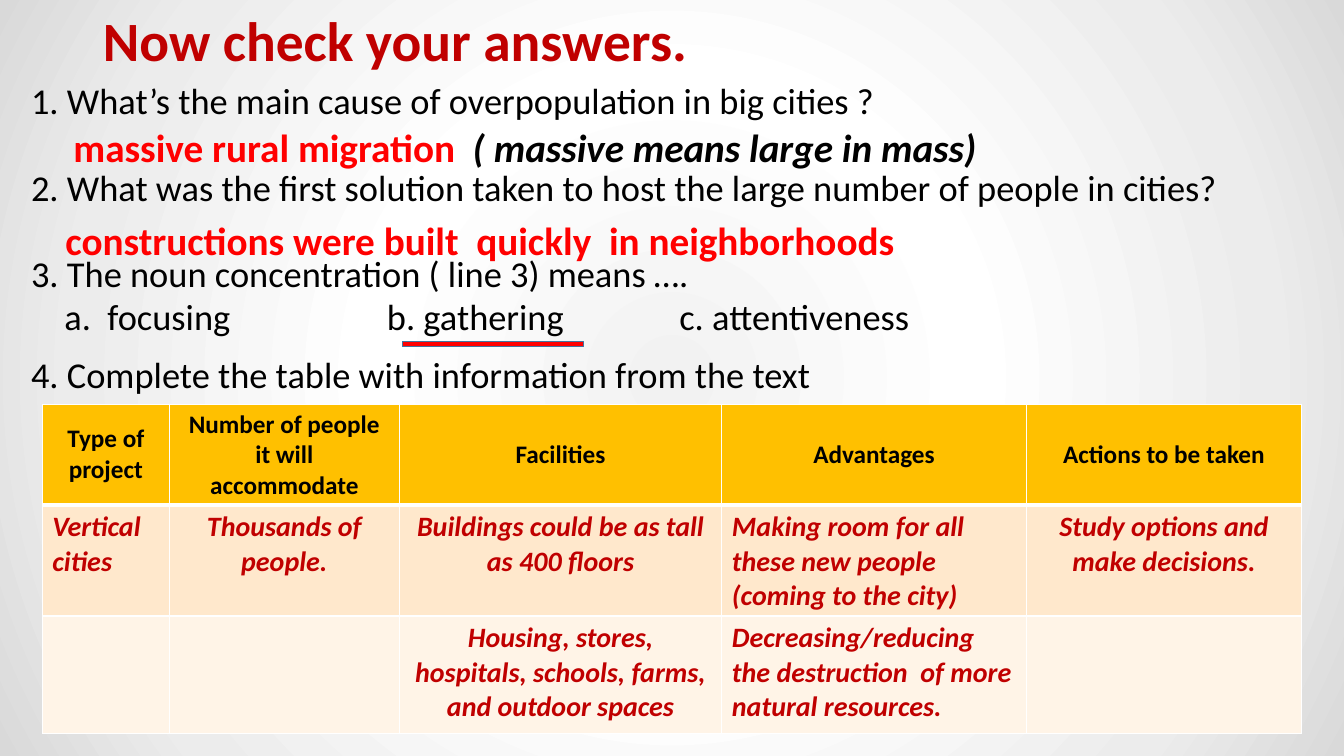
import pptx
import pptx.dml.color
import pptx.enum.shapes
import pptx.enum.text
import pptx.oxml
import pptx.oxml.ns
import pptx.util

Inches = pptx.util.Inches
Pt = pptx.util.Pt
ALIGN = pptx.enum.text.PP_ALIGN
ANCHOR = pptx.enum.text.MSO_ANCHOR

FONT = "Calibri"
COLORS = {
    "title": "C00000", "text": "000000", "answer": "FF0000", "outline": "43739E",
    "header": "FFC000", "first_row": "FFE8CC", "second_row": "FFF4E7", "border": "FFFFFF",
}
BACKGROUND_STOPS = [(0, "F2F2F2"), (39, "FFFFFF"), (78, "ECECEC"), (100, "D9D9D9")]

TITLE = "Now check your answers."
QUESTIONS = [
    "1. What’s the main cause of overpopulation in big cities ?",
    "2. What was the first solution taken to host the large number of people in cities?",
    "3. The noun concentration ( line 3) means ….",
]
CHOICES = ["a.  focusing", "b. gathering", "c. attentiveness"]
CHOICE_STOPS = [0.33, 3.53, 6.43]
MIGRATION_ANSWER = "massive rural migration  "
MIGRATION_NOTE = "( massive means large in mass)"
CONSTRUCTION_ANSWER = "constructions were built  quickly  in neighborhoods"
TABLE_QUESTION = "4. Complete the table with information from the text"
TABLE_ROWS = [
    ["Type of project", "Number of people it will accommodate", "Facilities",
     "Advantages", "Actions to be taken"],
    ["Vertical cities", "Thousands of people.", "Buildings could be as tall as 400 floors",
     "Making room for all these new people (coming to the city)",
     "Study options and make decisions."],
    ["", "", "Housing, stores, hospitals, schools, farms, and outdoor spaces",
     "Decreasing/reducing the destruction  of more natural resources.", ""],
]
ROW_FILLS = ["header", "first_row", "second_row"]
COLUMN_WIDTHS = [1.26, 2.28, 3.2, 3.02, 2.73]
ROW_HEIGHTS = [0.9, 1, 1.17]
LEFT_ALIGNED_COLUMNS = (0, 3)


def rgb(name):
    return pptx.dml.color.RGBColor.from_string(COLORS[name])


def set_font(font, size, color, bold=False, italic=False):
    font.name = FONT
    font.size = Pt(size)
    font.bold = bold
    font.italic = italic
    font.color.rgb = rgb(color)


def add_text(slide, box, text, size, color, bold=False):
    frame = slide.shapes.add_textbox(*map(Inches, box)).text_frame
    frame.word_wrap = True
    paragraph = frame.paragraphs[0]
    paragraph.text = text
    set_font(paragraph.font, size, color, bold)
    return frame


def set_background(slide):
    stops = "".join(
        f'<a:gs pos="{position * 1000}"><a:srgbClr val="{color}"/></a:gs>'
        for position, color in BACKGROUND_STOPS)
    background = pptx.oxml.parse_xml(
        f'<p:bg {pptx.oxml.ns.nsdecls("p", "a")}><p:bgPr>'
        f'<a:gradFill rotWithShape="1"><a:gsLst>{stops}</a:gsLst><a:path path="circle">'
        '<a:fillToRect l="50000" t="50000" r="50000" b="50000"/></a:path></a:gradFill>'
        '<a:effectLst/></p:bgPr></p:bg>')
    slide.element.cSld.insert(0, background)


def add_title(slide):
    title = slide.shapes.title
    title.left, title.top, title.width, title.height = map(Inches, (0.92, 0.06, 6.57, 0.75))
    frame = title.text_frame
    frame.text = TITLE
    frame.word_wrap = True
    frame.vertical_anchor = ANCHOR.MIDDLE
    paragraph = frame.paragraphs[0]
    paragraph.alignment = ALIGN.LEFT
    paragraph.line_spacing = 0.9
    set_font(paragraph.font, 39.6, "title", bold=True)


def add_questions(slide):
    frame = add_text(slide, (0.21, 0.73, 12.92, 3.32), QUESTIONS[0], 26, "text")
    for question in QUESTIONS[1:]:
        frame.paragraphs[-1].space_after = Pt(30.4)
        paragraph = frame.add_paragraph()
        paragraph.text = question
        set_font(paragraph.font, 26, "text")
    choices = frame.add_paragraph()
    choices.text = "".join("\t" + choice for choice in CHOICES)
    set_font(choices.font, 26, "text")
    stops = "".join(f'<a:tab pos="{Inches(stop)}" algn="l"/>' for stop in CHOICE_STOPS)
    tab_list = pptx.oxml.parse_xml(
        f'<a:tabLst {pptx.oxml.ns.nsdecls("a")}>{stops}</a:tabLst>')
    choices.font._element.addprevious(tab_list)


def add_answers(slide):
    frame = add_text(slide, (0.63, 1.17, 9.35, 0.57), "", 28, "answer", bold=True)
    for text, color, italic in ((MIGRATION_ANSWER, "answer", False),
                                (MIGRATION_NOTE, "text", True)):
        run = frame.paragraphs[0].add_run()
        run.text = text
        set_font(run.font, 28, color, True, italic)
    add_text(slide, (0.55, 2.1, 9.95, 0.57), CONSTRUCTION_ANSWER, 28, "answer", bold=True)
    underline = slide.shapes.add_shape(
        pptx.enum.shapes.MSO_SHAPE.RECTANGLE, *map(Inches, (3.99, 3.39, 1.8, 0.05)))
    underline.shadow.inherit = False
    underline.fill.solid()
    underline.fill.fore_color.rgb = rgb("answer")
    underline.line.color.rgb = rgb("outline")
    underline.line.width = Pt(1)


def set_borders(cell, row):
    widths = {"L": 1, "R": 1, "T": 3 if row == 1 else 1, "B": 3 if row == 0 else 1}
    properties = cell._tc.get_or_add_tcPr()
    for side, width in widths.items():
        properties.append(pptx.oxml.parse_xml(
            f'<a:ln{side} {pptx.oxml.ns.nsdecls("a")} w="{Pt(width)}"><a:solidFill>'
            f'<a:srgbClr val="{COLORS["border"]}"/></a:solidFill></a:ln{side}>'))


def add_answer_table(slide):
    table = slide.shapes.add_table(
        len(ROW_HEIGHTS), len(COLUMN_WIDTHS), Inches(0.42), Inches(4.01),
        Inches(sum(COLUMN_WIDTHS)), Inches(sum(ROW_HEIGHTS))).table
    for column, width in zip(table.columns, COLUMN_WIDTHS):
        column.width = Inches(width)
    for row, height in zip(table.rows, ROW_HEIGHTS):
        row.height = Inches(height)
    for row, texts in enumerate(TABLE_ROWS):
        is_header = row == 0
        for column, text in enumerate(texts):
            cell = table.cell(row, column)
            set_borders(cell, row)
            cell.fill.solid()
            cell.fill.fore_color.rgb = rgb(ROW_FILLS[row])
            cell.vertical_anchor = ANCHOR.MIDDLE if is_header else ANCHOR.TOP
            cell.text = text
            paragraph = cell.text_frame.paragraphs[0]
            is_left = column in LEFT_ALIGNED_COLUMNS and not is_header
            paragraph.alignment = ALIGN.LEFT if is_left else ALIGN.CENTER
            set_font(paragraph.font, 18 if is_header else 20,
                     "text" if is_header else "title", True, not is_header)


def main():
    presentation = pptx.Presentation()
    presentation.slide_width = Inches(13.33)
    presentation.slide_height = Inches(7.5)
    slide = presentation.slides.add_slide(presentation.slide_layouts[5])
    set_background(slide)
    add_title(slide)
    add_questions(slide)
    add_answers(slide)
    frame = add_text(slide, (0.21, 3.49, 11.5, 0.52), TABLE_QUESTION, 26, "text")
    frame.paragraphs[0].line_spacing = 0.9
    add_answer_table(slide)
    presentation.save("out.pptx")


if __name__ == "__main__":
    main()
